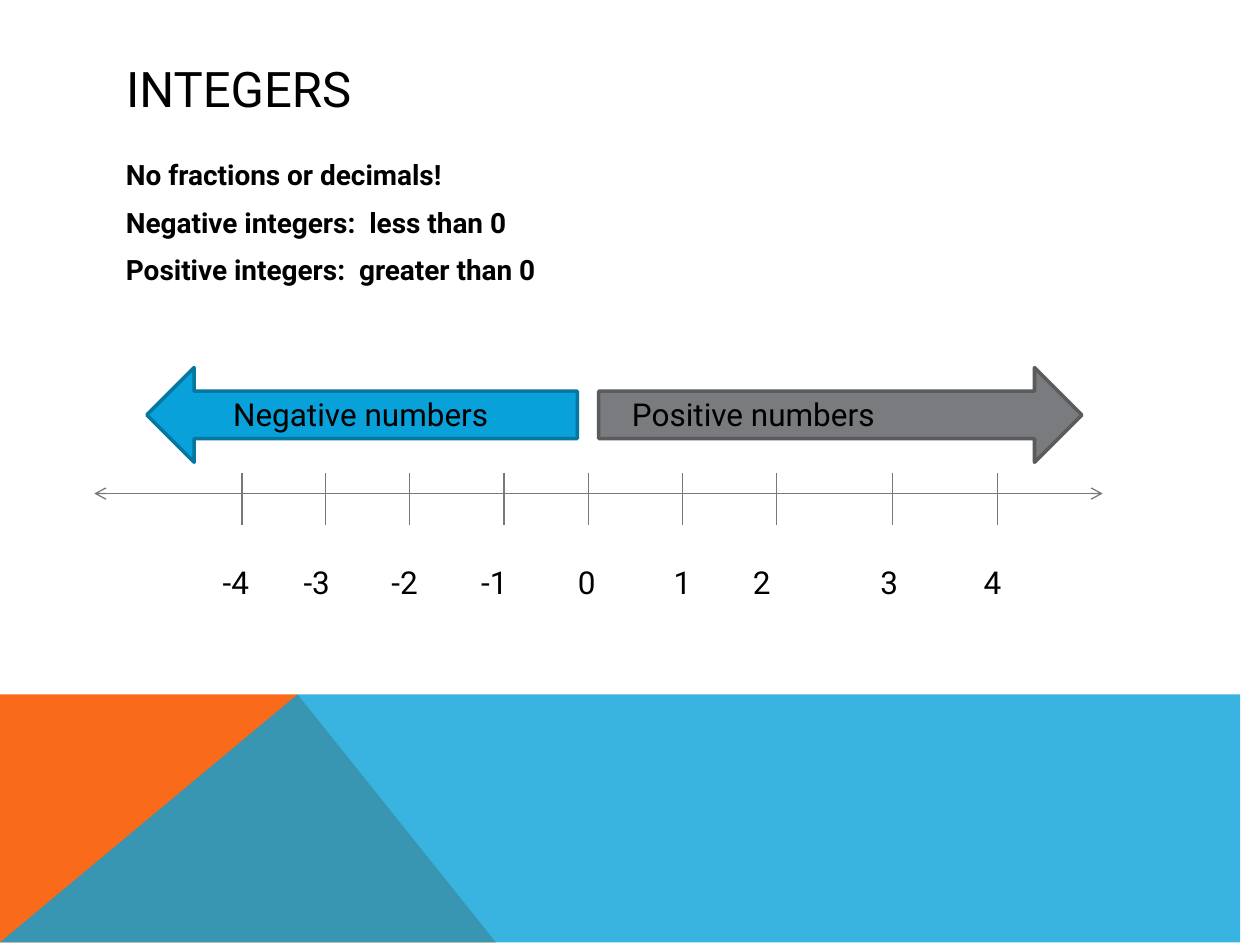
"""Build a slide that introduces integers on a number line."""
from dataclasses import dataclass

import lxml.etree
import pptx
import pptx.dml.color
import pptx.enum.shapes
import pptx.enum.text
import pptx.oxml.ns
import pptx.util

Cm = pptx.util.Cm
Pt = pptx.util.Pt
qn = pptx.oxml.ns.qn
Preset = pptx.enum.shapes.MSO_SHAPE

FONT = "Roboto"
COLORS = {
    "text": "000000",
    "axis": "76787B",
    "orange": "F96A1B",
    "blue": "08A1D9",
    "blue_edge": "0677A1",
    "gray": "797B7E",
    "gray_edge": "5A5B5D",
}


@dataclass
class Box:
    left: float
    top: float
    width: float
    height: float


@dataclass
class Region:
    points: list[tuple[float, float]]
    color: str
    opacity: int


@dataclass
class BlockArrow:
    preset: Preset
    box: Box
    fill: str
    edge: str


@dataclass
class Caption:
    box: Box
    lines: list[str]
    size: int = 18
    bold: bool = False
    space_before: int = 0


@dataclass
class Tick:
    value: int
    position: float
    label_left: float


REGIONS = [
    Region([(0, 19.05), (0, 14.02), (5.66, 14.02), (9.93, 19.05)], "orange", 100),
    Region([(0, 19.05), (5.66, 14.02), (25.4, 14.02), (25.4, 19.05)], "blue", 80),
]
ARROWS = [
    BlockArrow(Preset.LEFT_ARROW, Box(2.96, 7.41, 8.68, 1.91), "blue", "blue_edge"),
    BlockArrow(Preset.RIGHT_ARROW, Box(12.07, 7.41, 9.74, 1.91), "gray", "gray_edge"),
]
TICKS = [
    Tick(-4, 4.88, 0),
    Tick(-3, 6.56, 1.63),
    Tick(-2, 8.26, 3.4),
    Tick(-1, 10.16, 5.21),
    Tick(0, 11.86, 7.16),
    Tick(1, 13.76, 9.09),
    Tick(2, 15.66, 10.69),
    Tick(3, 17.99, 13.26),
    Tick(4, 20.11, 15.34),
]
FACTS = Caption(
    Box(2.29, 3.05, 20.88, 9.93),
    [
        "No fractions or decimals!",
        "Negative integers:  less than 0",
        "Positive integers:  greater than 0",
    ],
    size=16, bold=True, space_before=8,
)
ARROW_CAPTIONS = [
    Caption(Box(4.45, 7.83, 6.15, 1.02), ["Negative numbers"]),
    Caption(Box(12.49, 7.83, 7.62, 1.02), ["Positive numbers"]),
]
TICK_LABELS = Caption(
    Box(4.24, 11.22, 17.58, 1.02), ["\t".join(str(tick.value) for tick in TICKS)]
)


def rgb(name: str) -> pptx.dml.color.RGBColor:
    """Look up a palette colour."""
    return pptx.dml.color.RGBColor.from_string(COLORS[name])


def extent(box: Box) -> tuple:
    """Turn a box into slide lengths."""
    return Cm(box.left), Cm(box.top), Cm(box.width), Cm(box.height)


def format_runs(frame, size: int, bold: bool) -> None:
    """Give every run the slide font."""
    for para in frame.paragraphs:
        for span in para.runs:
            span.font.name = FONT
            span.font.size = Pt(size)
            span.font.bold = bold
            span.font.color.rgb = rgb("text")


def set_title(slide, text: str) -> None:
    """Place and format the title placeholder."""
    title = slide.shapes.title
    title.left, title.top, title.width, title.height = extent(Box(2.29, 1.02, 20.88, 1.52))
    frame = title.text_frame
    frame.text = text
    frame.vertical_anchor = pptx.enum.text.MSO_ANCHOR.MIDDLE
    frame.paragraphs[0].alignment = pptx.enum.text.PP_ALIGN.LEFT
    format_runs(frame, 28, False)


def draw_region(slide, region: Region) -> None:
    """Draw one area of the bottom band."""
    builder = slide.shapes.build_freeform(*region.points[0], scale=float(Cm(1)))
    builder.add_line_segments(region.points[1:], close=True)
    shape = builder.convert_to_shape()
    shape.shadow.inherit = False
    shape.fill.solid()
    shape.fill.fore_color.rgb = rgb(region.color)
    shape.line.fill.background()
    if region.opacity < 100:
        color = shape.fill._xPr.find(".//" + qn("a:srgbClr"))
        lxml.etree.SubElement(color, qn("a:alpha"), val=str(region.opacity * 1000))


def draw_arrow(slide, arrow: BlockArrow) -> None:
    """Draw one block arrow."""
    shape = slide.shapes.add_shape(arrow.preset, *extent(arrow.box))
    shape.shadow.inherit = False
    shape.fill.solid()
    shape.fill.fore_color.rgb = rgb(arrow.fill)
    shape.line.color.rgb = rgb(arrow.edge)
    shape.line.width = Pt(2)


def draw_line(slide, start: tuple, end: tuple, arrowheads: bool = False) -> None:
    """Draw a thin line, with open arrowheads if asked."""
    line = slide.shapes.add_connector(
        pptx.enum.shapes.MSO_CONNECTOR.STRAIGHT, *map(Cm, start + end)
    )
    line.line.color.rgb = rgb("axis")
    line.line.width = Pt(0.75)
    if arrowheads:
        for tag in ("a:headEnd", "a:tailEnd"):
            lxml.etree.SubElement(line.line._get_or_add_ln(), qn(tag), type="arrow")
    lxml.etree.SubElement(line._element.spPr, qn("a:effectLst"))


def draw_caption(slide, caption: Caption):
    """Add a text box and return its text frame."""
    frame = slide.shapes.add_textbox(*extent(caption.box)).text_frame
    frame.word_wrap = True
    frame.text = "\n".join(caption.lines)
    for para in frame.paragraphs:
        para.space_before = Pt(caption.space_before)
    format_runs(frame, caption.size, caption.bold)
    return frame


def set_tab_stops(para, positions: list[float]) -> None:
    """Give a paragraph left tab stops."""
    stops = lxml.etree.SubElement(para._p.get_or_add_pPr(), qn("a:tabLst"))
    for position in positions:
        lxml.etree.SubElement(stops, qn("a:tab"), pos=str(int(Cm(position))), algn="l")


def main() -> None:
    """Build and save the deck."""
    deck = pptx.Presentation()
    deck.slide_width, deck.slide_height = Cm(25.4), Cm(19.05)
    page = deck.slides.add_slide(deck.slide_layouts.get_by_name("Title Only"))
    for region in REGIONS:
        draw_region(page, region)
    set_title(page, "INTEGERS")
    draw_caption(page, FACTS)
    draw_line(page, (1.9, 9.95), (22.23, 9.95), arrowheads=True)
    for arrow in ARROWS:
        draw_arrow(page, arrow)
    for tick in TICKS:
        draw_line(page, (tick.position, 9.53), (tick.position, 10.58))
    for caption in ARROW_CAPTIONS:
        draw_caption(page, caption)
    labels = draw_caption(page, TICK_LABELS)
    set_tab_stops(labels.paragraphs[0], [tick.label_left for tick in TICKS[1:]])
    deck.save("out.pptx")


if __name__ == "__main__":
    main()
